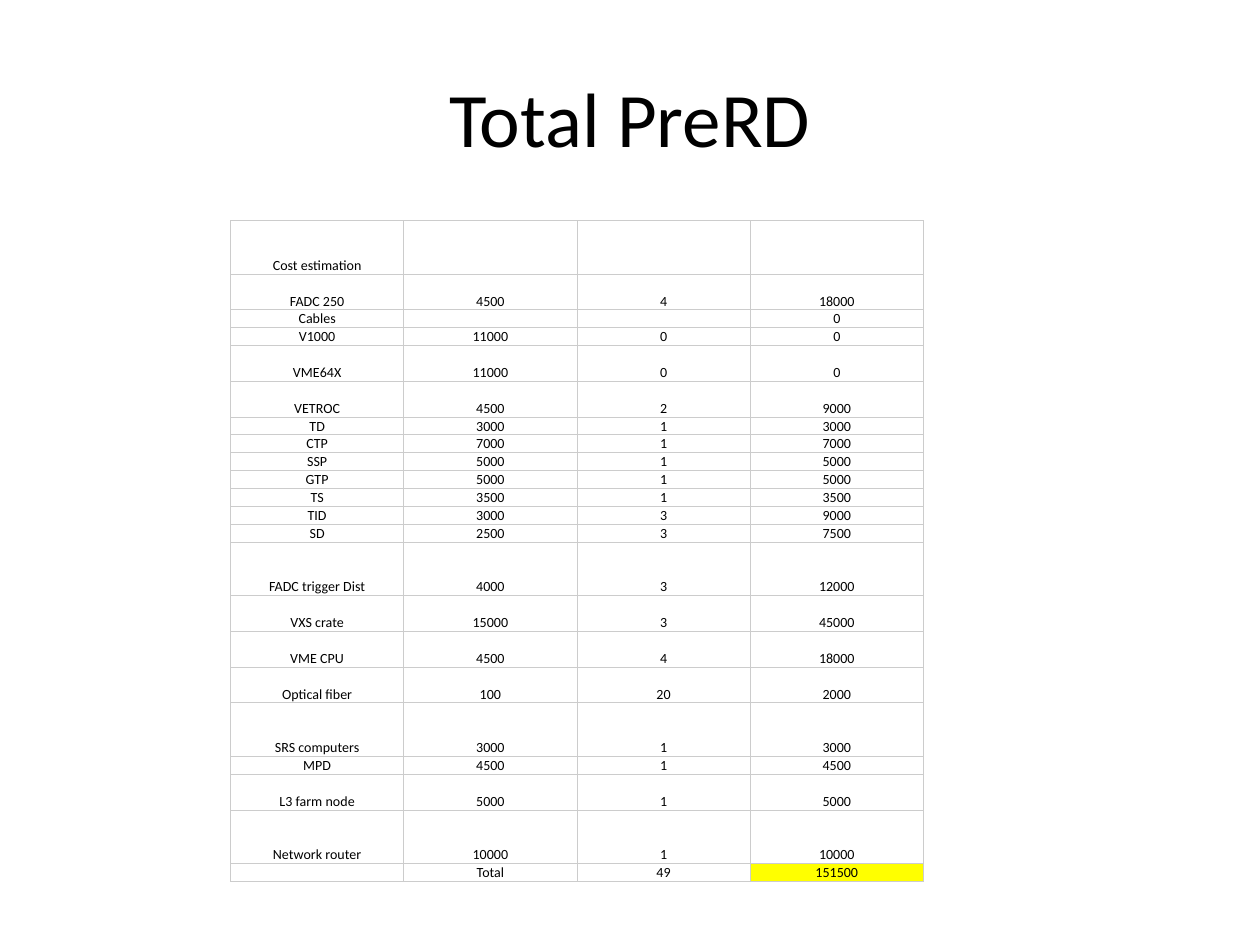
from lxml.etree import SubElement
from pptx import Presentation
from pptx.dml.color import RGBColor
from pptx.enum.text import MSO_ANCHOR as Anchor, PP_ALIGN as Align
from pptx.oxml.ns import qn
from pptx.util import Inches, Pt

FONT = "Calibri"
INK, RULE, HIGHLIGHT = "000000", "CCCCCC", "FFFF00"
WIDTH, HEIGHT = Inches(10), Inches(7.5)
LINE_HEIGHT = Inches(5.25) / 37

ITEMS = [
    ("FADC 250", 4500, 4, 2),
    ("Cables", None, None, 1),
    ("V1000", 11000, 0, 1),
    ("VME64X", 11000, 0, 2),
    ("VETROC", 4500, 2, 2),
    ("TD", 3000, 1, 1),
    ("CTP", 7000, 1, 1),
    ("SSP", 5000, 1, 1),
    ("GTP", 5000, 1, 1),
    ("TS", 3500, 1, 1),
    ("TID", 3000, 3, 1),
    ("SD", 2500, 3, 1),
    ("FADC trigger Dist", 4000, 3, 3),
    ("VXS crate", 15000, 3, 2),
    ("VME CPU", 4500, 4, 2),
    ("Optical fiber", 100, 20, 2),
    ("SRS computers", 3000, 1, 3),
    ("MPD", 4500, 1, 1),
    ("L3 farm node", 5000, 1, 2),
    ("Network router", 10000, 1, 3),
]


def color(code):
    """Turn a hex string into a colour."""
    return RGBColor.from_string(code)


def write(para, text, size):
    """Add one centred run, or size the empty paragraph."""
    para.alignment = Align.CENTER
    if text == "":
        SubElement(para._p, qn("a:endParaRPr"), sz=str(size * 100))
        return
    span = para.add_run()
    span.text = text
    span.font.name = FONT
    span.font.size = Pt(size)
    span.font.color.rgb = color(INK)


def add_title(page, text):
    """Place the title across the top of the page."""
    box = page.shapes.add_textbox(
        int(WIDTH * 0.05), int(HEIGHT * 0.04), int(WIDTH * 0.9), Inches(1.25))
    frame = box.text_frame
    frame.word_wrap = True
    frame.vertical_anchor = Anchor.MIDDLE
    write(frame.paragraphs[0], text, 44)


def add_borders(cell):
    """Draw a thin rule on all four sides of a cell."""
    properties = cell._tc.get_or_add_tcPr()
    for side in ("a:lnL", "a:lnR", "a:lnT", "a:lnB"):
        line = SubElement(properties, qn(side), w=str(Pt(0.5)))
        fill = SubElement(line, qn("a:solidFill"))
        SubElement(fill, qn("a:srgbClr"), val=RULE)


def fill_cell(cell, text, highlighted):
    """Style one cell and write its text."""
    cell.margin_left = cell.margin_right = Inches(0.01)
    cell.margin_top = cell.margin_bottom = 0
    cell.vertical_anchor = Anchor.BOTTOM
    add_borders(cell)
    if highlighted:
        cell.fill.solid()
        cell.fill.fore_color.rgb = color(HIGHLIGHT)
    else:
        cell.fill.background()
    write(cell.text_frame.paragraphs[0], text, 8)


def cost_rows():
    """List each row's height in lines and its four texts."""
    rows = [(3, ["Cost estimation", "", "", ""])]
    for name, price, count, lines in ITEMS:
        if price is None:
            rows.append((lines, [name, "", "", "0"]))
        else:
            rows.append((lines, [name, str(price), str(count), str(price * count)]))
    return rows + [(1, ["", "Total", "49", "151500"])]


def add_cost_table(page):
    """Add the cost table with the grand total highlighted."""
    rows = cost_rows()
    table = page.shapes.add_table(
        len(rows), 4, Inches(1.83), Inches(1.75), Inches(5.5), Inches(5.25)).table
    table.first_row = table.horz_banding = False
    for index, (lines, texts) in enumerate(rows):
        table.rows[index].height = int(lines * LINE_HEIGHT)
        for column, text in enumerate(texts):
            is_total = (index, column) == (len(rows) - 1, 3)
            fill_cell(table.cell(index, column), text, is_total)


def main():
    """Build the slide and save the deck."""
    deck = Presentation()
    deck.slide_width, deck.slide_height = WIDTH, HEIGHT
    page = deck.slides.add_slide(deck.slide_layouts[6])
    add_title(page, "Total PreRD")
    add_cost_table(page)
    deck.save("out.pptx")


if __name__ == "__main__":
    main()
